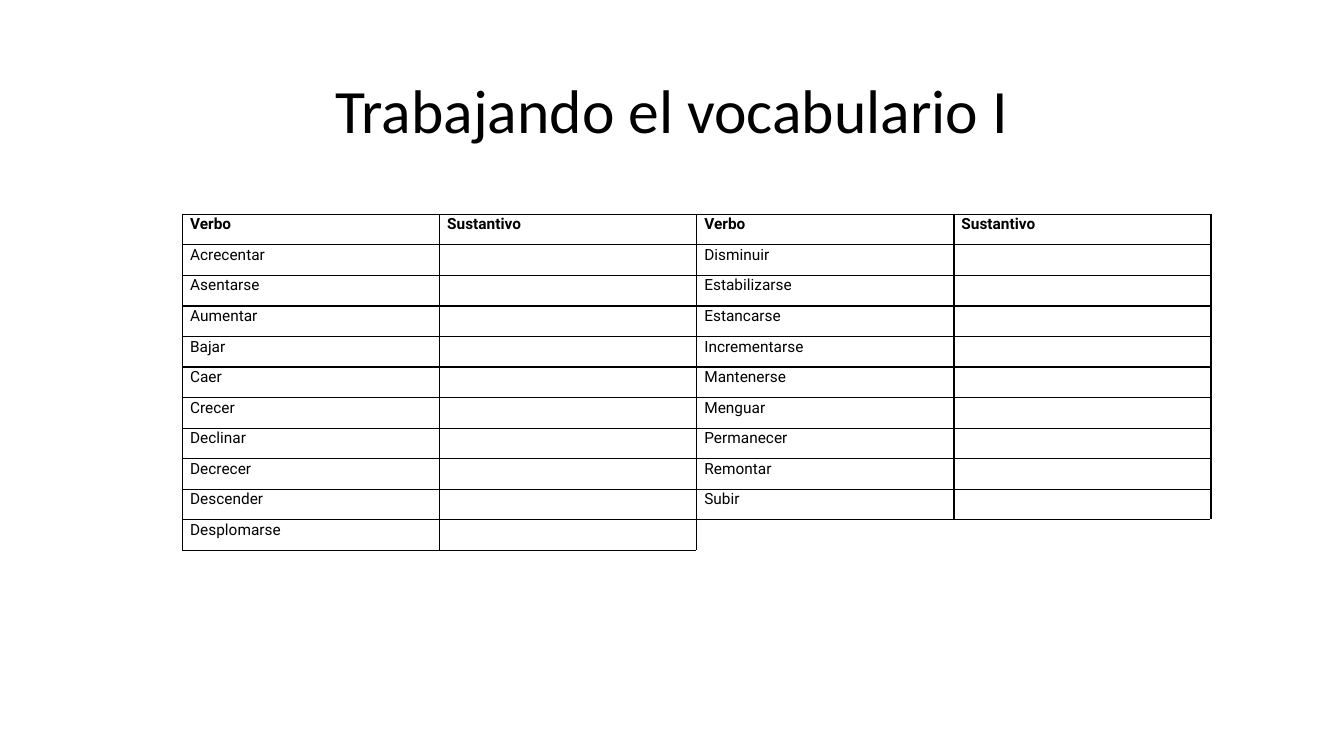
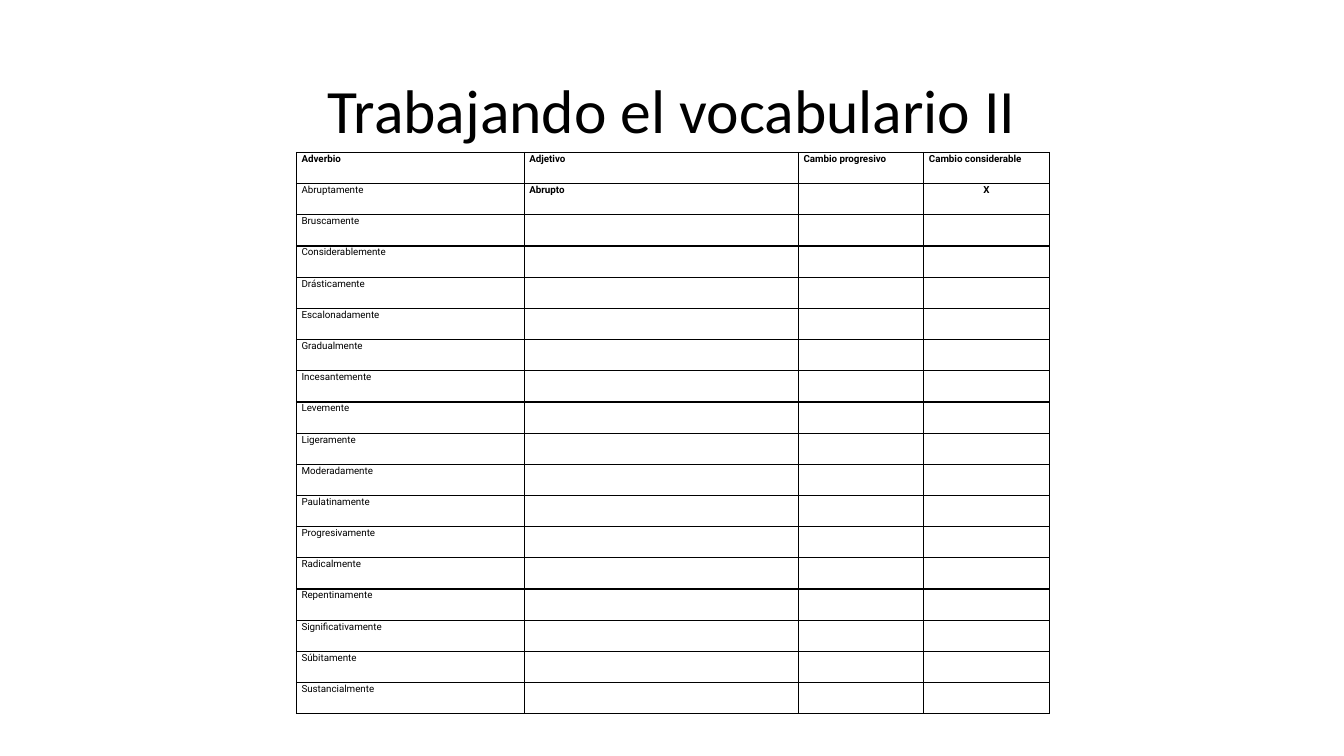
from itertools import zip_longest

from lxml.etree import SubElement
from pptx import Presentation
from pptx.dml.color import RGBColor
from pptx.enum.text import MSO_ANCHOR as Anchor, PP_ALIGN as Align
from pptx.oxml.ns import qn
from pptx.util import Cm, Pt

VERBS_LEFT = ["Acrecentar", "Asentarse", "Aumentar", "Bajar", "Caer", "Crecer",
              "Declinar", "Decrecer", "Descender", "Desplomarse"]
VERBS_RIGHT = ["Disminuir", "Estabilizarse", "Estancarse", "Incrementarse", "Mantenerse",
               "Menguar", "Permanecer", "Remontar", "Subir"]
ADVERBS = ["Bruscamente", "Considerablemente", "Drásticamente", "Escalonadamente",
           "Gradualmente", "Incesantemente", "Levemente", "Ligeramente", "Moderadamente",
           "Paulatinamente", "Progresivamente", "Radicalmente", "Repentinamente",
           "Significativamente", "Súbitamente", "Sustancialmente"]


def color(value):
    return RGBColor.from_string(value)


def write(frame, text, font, size, ink, bold=False, align=Align.LEFT, spacing=1.0):
    para = frame.paragraphs[0]
    para.alignment = align
    para.line_spacing = spacing
    if not text:
        SubElement(para._p, qn("a:endParaRPr"), sz=str(size * 100))
        return
    span = para.add_run()
    span.text = text
    span.font.name = font
    span.font.size = Pt(size)
    span.font.bold = bold
    span.font.color.rgb = color(ink)


class Lesson:
    ink = "000000"
    paper = "FFFFFF"
    title_font = "Calibri"
    table_font = "Roboto"

    def __init__(self):
        self.deck = Presentation()
        self.deck.slide_width = Cm(33.87)
        self.deck.slide_height = Cm(19.05)
        self.page = None

    def add_page(self, title):
        self.page = self.deck.slides.add_slide(self.deck.slide_layouts[6])
        background = self.page.background.fill
        background.solid()
        background.fore_color.rgb = color(self.paper)
        box = self.page.shapes.add_textbox(Cm(2.33), Cm(1.01), Cm(29.21), Cm(3.68))
        frame = box.text_frame
        frame.word_wrap = True
        frame.vertical_anchor = Anchor.MIDDLE
        write(frame, title, self.title_font, 44, self.ink, align=Align.CENTER, spacing=0.9)

    def add_table(self, rows, left, top, widths, height, size, inset, bold_cells=(),
                  align=Align.LEFT, centered_cells=()):
        table = self.page.shapes.add_table(
            len(rows), len(widths), Cm(left), Cm(top), Cm(sum(widths)), Cm(height)).table
        table.first_row = table.horz_banding = False
        for column, width in zip(table.columns, widths):
            column.width = Cm(width)
        for r, row in enumerate(rows):
            for c, text in enumerate(row):
                cell = table.cell(r, c)
                cell.margin_left = cell.margin_right = Cm(inset)
                cell.margin_top = cell.margin_bottom = 0
                self.add_borders(cell, "LRTB" if text is not None else "LT")
                cell.fill.background()
                write(cell.text_frame, text, self.table_font, size, self.ink,
                      bold=r == 0 or (r, c) in bold_cells,
                      align=Align.CENTER if (r, c) in centered_cells else align,
                      spacing=1.07)
        return table

    def add_borders(self, cell, sides):
        properties = cell._tc.get_or_add_tcPr()
        for side in sides:
            line = SubElement(properties, qn(f"a:ln{side}"), w=str(Pt(1)))
            fill = SubElement(line, qn("a:solidFill"))
            SubElement(fill, qn("a:srgbClr"), val=self.ink)


def main():
    lesson = Lesson()

    lesson.add_page("Trabajando el vocabulario I")
    verb_rows = [["Verbo", "Sustantivo"] * 2]
    for first, second in zip_longest(VERBS_LEFT, VERBS_RIGHT):
        verb_rows.append([first, "", second, "" if second else None])
    verbs = lesson.add_table(verb_rows, 4.6, 5.4, [6.48] * 4, 8.47, size=11, inset=0.19,
                             align=Align.JUSTIFY)
    last = len(verb_rows) - 1
    verbs.cell(last, 2).merge(verbs.cell(last, 3))

    lesson.add_page("Trabajando el vocabulario II")
    adverb_rows = [["Adverbio", "Adjetivo", "Cambio progresivo", "Cambio considerable"],
                   ["Abruptamente", "Abrupto", "", "X"]]
    adverb_rows += [[adverb, "", "", ""] for adverb in ADVERBS]
    lesson.add_table(adverb_rows, 7.47, 3.84, [5.74, 6.91, 3.16, 3.16], 14.15, size=7,
                     inset=0.13, bold_cells={(1, 1), (1, 3)}, centered_cells={(1, 3)})

    lesson.deck.save("out.pptx")


if __name__ == "__main__":
    main()
